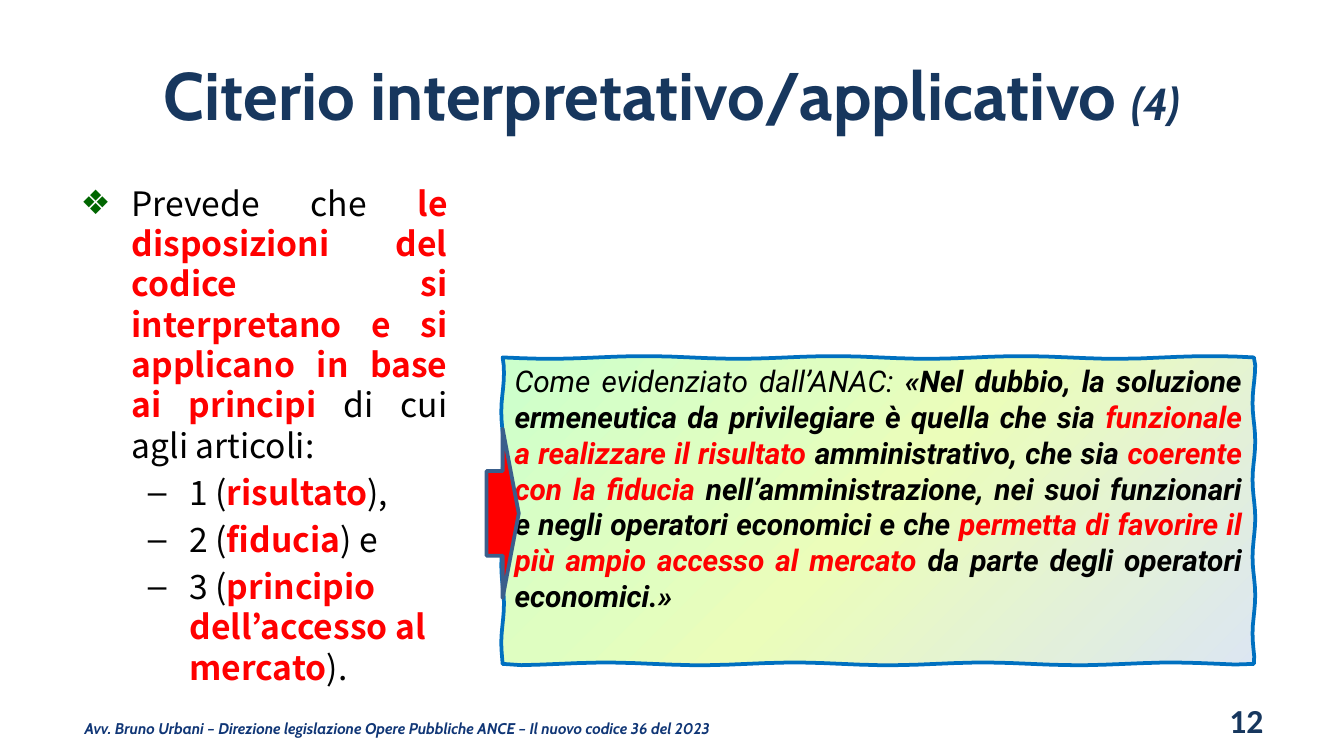
from copy import deepcopy
from math import sin

from lxml.etree import SubElement
from pptx import Presentation
from pptx.dml.color import RGBColor
from pptx.enum.shapes import MSO_SHAPE
from pptx.enum.text import MSO_ANCHOR, MSO_AUTO_SIZE, PP_ALIGN
from pptx.oxml.ns import qn
from pptx.util import Inches, Pt

NAVY = RGBColor(0x17, 0x37, 0x5E)
FOOTER_BLUE = RGBColor(0x10, 0x36, 0x76)
BLACK = RGBColor(0, 0, 0)
RED = RGBColor(0xFF, 0, 0)
GREEN = RGBColor(0, 0x66, 0)
BORDER_BLUE = RGBColor(0, 0x70, 0xC0)
ARROW_EDGE = RGBColor(0x3A, 0x5F, 0x8C)
QUOTE_STOPS = [
    (0, RGBColor(0xDC, 0xE6, 0xF2)),
    (0.5, RGBColor(0xEB, 0xFD, 0xBA)),
    (0.69, RGBColor(0xDF, 0xFE, 0xC1)),
    (1, RGBColor(0xCC, 0xFF, 0xCC)),
]

BODY = [
    [("Prevede che ", False),
     ("le disposizioni del codice si interpretano e si applicano in base ai principi ", True),
     ("di cui agli articoli:", False)],
    [("1 (", False), ("risultato", True), ("),", False)],
    [("2 (", False), ("fiducia", True), (") e", False)],
    [("3 (", False), ("principio dell’accesso al mercato", True), (").", False)],
]
QUOTE = [
    ("«Nel dubbio, la soluzione ermeneutica da privilegiare è quella che sia ", BLACK),
    ("funzionale a realizzare il risultato ", RED),
    ("amministrativo, che sia ", BLACK),
    ("coerente con la fiducia ", RED),
    ("nell’amministrazione, nei suoi funzionari e negli operatori economici e che ", BLACK),
    ("permetta di favorire il più ampio accesso al mercato ", RED),
    ("da parte degli operatori economici.»", BLACK),
]


def place(shape, left, top, width, height):
    """Move and size a shape, in inches."""
    shape.left, shape.top = Inches(left), Inches(top)
    shape.width, shape.height = Inches(width), Inches(height)


def add_run(paragraph, text, font_name, size, color, bold=False, italic=False):
    """Append one formatted run to a paragraph."""
    run = paragraph.add_run()
    run.text = text
    run.font.name, run.font.size = font_name, Pt(size)
    run.font.bold, run.font.italic = bold, italic
    run.font.color.rgb = color


def set_bullet(paragraph, character, margin, hanging, color):
    """Give a paragraph a coloured bullet and a hanging indent."""
    properties = paragraph._p.get_or_add_pPr()
    properties.set("marL", str(Inches(margin)))
    properties.set("indent", str(-Inches(hanging)))
    bullet_color = SubElement(properties, qn("a:buClr"))
    SubElement(bullet_color, qn("a:srgbClr"), val=str(color))
    SubElement(properties, qn("a:buChar"), char=character)


def add_title(slide):
    """Fill the title placeholder."""
    title = slide.shapes.title
    place(title, 0.5, 0.23, 9, 0.94)
    frame = title.text_frame
    frame.auto_size = MSO_AUTO_SIZE.NONE
    frame.vertical_anchor = MSO_ANCHOR.MIDDLE
    heading = frame.paragraphs[0]
    heading.alignment = PP_ALIGN.CENTER
    add_run(heading, "Citerio interpretativo/applicativo ", "Cabin", 36, NAVY, True)
    add_run(heading, "(4)", "Cabin", 24, NAVY, True, True)


def add_principles(slide):
    """Fill the body placeholder with the rule and its three articles."""
    body = slide.placeholders[1]
    place(body, 0.5, 1.31, 2.93, 3.9)
    frame = body.text_frame
    frame.auto_size = MSO_AUTO_SIZE.NONE
    for index, pieces in enumerate(BODY):
        paragraph = frame.add_paragraph() if index else frame.paragraphs[0]
        if index:
            paragraph.level = 1
            set_bullet(paragraph, "–", 0.81, 0.31, BLACK)
        else:
            paragraph.alignment = PP_ALIGN.JUSTIFY
            set_bullet(paragraph, "❖", 0.38, 0.38, GREEN)
        paragraph.space_before = Pt(3.6 if index else 0)
        for text, key in pieces:
            add_run(paragraph, text, "Noto Sans CJK JP", 18, RED if key else BLACK, key)


def add_label(slide, box, text, font_name, size, color, align, italic=False):
    """Add a one-line bold label, centred vertically."""
    frame = slide.shapes.add_textbox(*map(Inches, box)).text_frame
    frame.word_wrap = True
    frame.vertical_anchor = MSO_ANCHOR.MIDDLE
    frame.margin_left = frame.margin_right = Inches(0.07 if italic else 0.1)
    frame.margin_top = frame.margin_bottom = Inches(0.04)
    frame.paragraphs[0].alignment = align
    add_run(frame.paragraphs[0], text, font_name, size, color, True, italic)


def sketched_outline(left, top, width, height, steps=40, wobble=0.01):
    """Return the points of a rectangle with slightly wavy sides."""
    right, bottom = left + width, top + height
    corners = [(left, top), (right, top), (right, bottom), (left, bottom)]
    points = []
    for side, (x, y) in enumerate(corners):
        next_x, next_y = corners[(side + 1) % 4]
        for step in range(steps):
            part = step / steps
            shift = wobble * sin(part * 25 + side) if step else 0
            along_x, along_y = x + (next_x - x) * part, y + (next_y - y) * part
            if side % 2:
                along_x += shift
            else:
                along_y += shift
            points.append((Inches(along_x), Inches(along_y)))
    return points


def fill_gradient(shape, stops, angle):
    """Fill a shape with a linear gradient of any number of stops."""
    shape.fill.gradient()
    shape.fill.gradient_angle = angle
    stop_list = shape._element.spPr.find(qn("a:gradFill")).find(qn("a:gsLst"))
    model = deepcopy(stop_list[0])
    for stop in list(stop_list):
        stop_list.remove(stop)
    for _ in stops:
        stop_list.append(deepcopy(model))
    for stop, (position, color) in zip(shape.fill.gradient_stops, stops):
        stop.position = position
        stop.color.rgb = color


def add_quote(slide):
    """Add the hand-drawn panel with the quotation."""
    points = sketched_outline(3.74, 2.66, 5.59, 2.28)
    builder = slide.shapes.build_freeform(*points[0])
    builder.add_line_segments(points[1:], close=True)
    panel = builder.convert_to_shape()
    panel.shadow.inherit = False
    fill_gradient(panel, QUOTE_STOPS, 135)
    panel.line.color.rgb = BORDER_BLUE
    panel.line.width = Pt(2)
    frame = panel.text_frame
    frame.word_wrap = True
    frame.vertical_anchor = MSO_ANCHOR.TOP
    quotation = frame.paragraphs[0]
    quotation.alignment = PP_ALIGN.JUSTIFY
    add_run(quotation, "Come evidenziato dall’ANAC: ", "Roboto", 16, BLACK, italic=True)
    for text, color in QUOTE:
        add_run(quotation, text, "Roboto", 16, color, True, True)


def add_arrow(slide):
    """Add the red arrow that leads into the quotation."""
    arrow = slide.shapes.add_shape(
        MSO_SHAPE.DOWN_ARROW, Inches(3.11), Inches(3.7), Inches(1.26), Inches(0.24))
    arrow.rotation = 270
    arrow.shadow.inherit = False
    arrow.fill.solid()
    arrow.fill.fore_color.rgb = RED
    arrow.line.color.rgb = ARROW_EDGE
    arrow.line.width = Pt(2)


def main():
    """Build and save the slide."""
    presentation = Presentation()
    presentation.slide_width = Inches(10)
    presentation.slide_height = Inches(10) * 9 // 16
    slide = presentation.slides.add_slide(presentation.slide_layouts[1])
    add_label(slide, (0.56, 5.27, 5.23, 0.3),
              "Avv. Bruno Urbani – Direzione legislazione Opere Pubbliche ANCE"
              " – Il nuovo codice 36 del 2023",
              "Cabin", 8.3, FOOTER_BLUE, PP_ALIGN.LEFT, True)
    add_title(slide)
    add_principles(slide)
    add_label(slide, (7.17, 5.21, 2.33, 0.3), "12", "Calibri", 18, NAVY, PP_ALIGN.RIGHT)
    add_quote(slide)
    add_arrow(slide)
    presentation.save("out.pptx")


if __name__ == "__main__":
    main()
